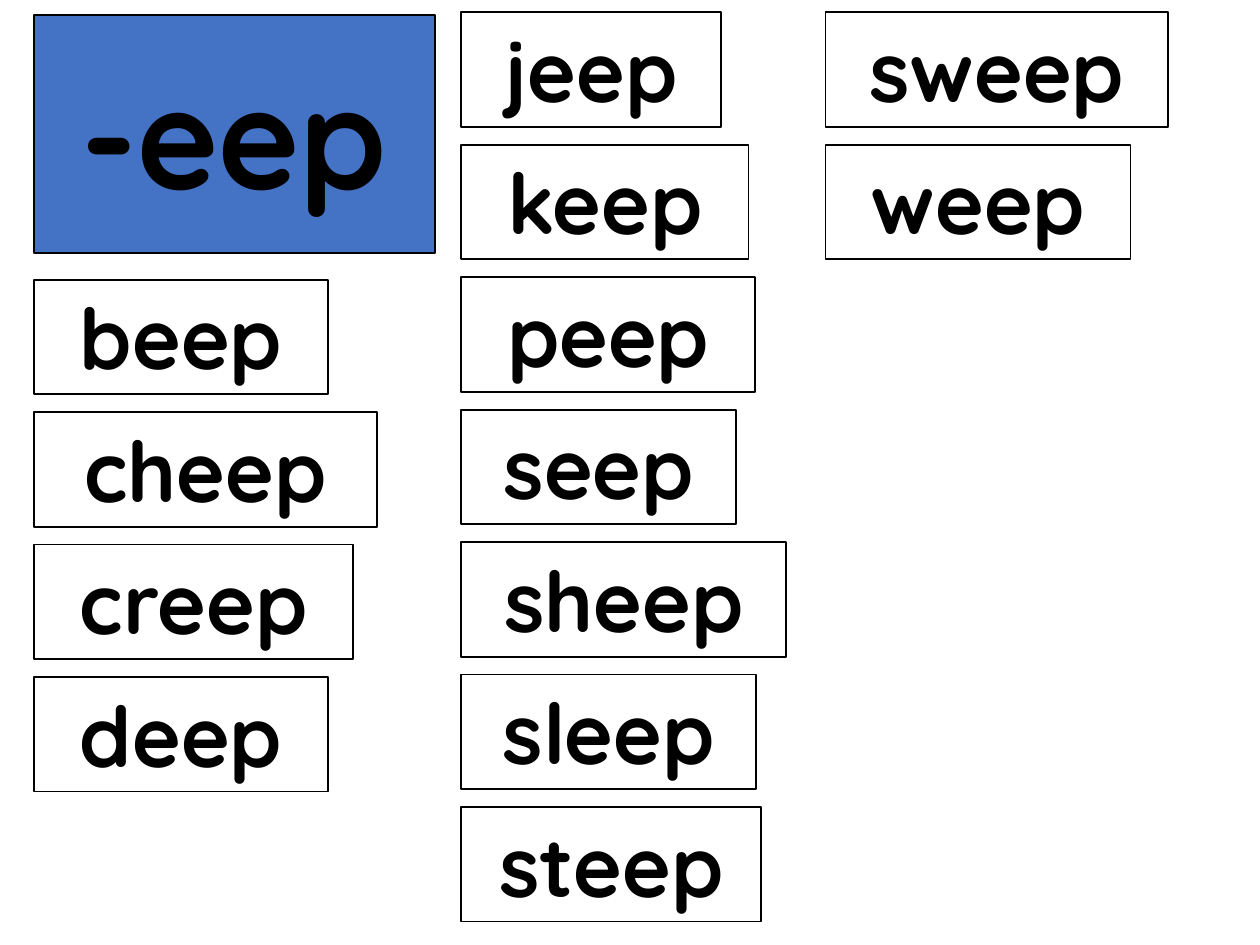
import pptx
import pptx.util
import pptx.dml.color
import pptx.enum.shapes
import pptx.enum.text

Cm = pptx.util.Cm
Pt = pptx.util.Pt
RGBColor = pptx.dml.color.RGBColor
MSO_ANCHOR = pptx.enum.text.MSO_ANCHOR
MSO_AUTO_SIZE = pptx.enum.text.MSO_AUTO_SIZE

BLACK = RGBColor(0x00, 0x00, 0x00)
WHITE = RGBColor(0xFF, 0xFF, 0xFF)
BLUE = RGBColor(0x44, 0x72, 0xC4)

CARD_HEIGHT = 2.31
CARD_PITCH = 2.67

deck = pptx.Presentation()
deck.slide_width = Cm(25.4)
deck.slide_height = Cm(19.05)
page = deck.slides.add_slide(deck.slide_layouts[6])


def add_card(text, left, top, width, height, fill, size):
    box = page.shapes.add_shape(
        pptx.enum.shapes.MSO_SHAPE.RECTANGLE, Cm(left), Cm(top), Cm(width), Cm(height)
    )
    box.shadow.inherit = False
    box.fill.solid()
    box.fill.fore_color.rgb = fill
    box.line.color.rgb = BLACK
    box.line.width = Pt(1)
    para = box.text_frame.paragraphs[0]
    para.text = text
    para.alignment = pptx.enum.text.PP_ALIGN.CENTER
    para.font.name = "Quicksand"
    para.font.size = Pt(size)
    para.font.bold = True
    para.font.color.rgb = BLACK
    return box


columns = [
    (16.64, 0.25, [("sweep", 6.91), ("weep", 6.15)]),
    (9.3, 0.25, [
        ("jeep", 5.23), ("keep", 5.79), ("peep", 5.92), ("seep", 5.54),
        ("sheep", 6.55), ("sleep", 5.94), ("steep", 6.05),
    ]),
    (0.69, 5.64, [("beep", 5.92), ("cheep", 6.91), ("creep", 6.43), ("deep", 5.92)]),
]

for left, first_top, words in columns:
    for row, (word, width) in enumerate(words):
        top = first_top + row * CARD_PITCH
        card = add_card(f" {word} ", left, top, width, CARD_HEIGHT, WHITE, 48)
        card.text_frame.word_wrap = False
        card.text_frame.auto_size = MSO_AUTO_SIZE.SHAPE_TO_FIT_TEXT
        card.text_frame.vertical_anchor = MSO_ANCHOR.TOP

heading = add_card("-eep", 0.69, 0.3, 8.08, 4.8, BLUE, 80)
heading.text_frame.word_wrap = True
heading.text_frame.vertical_anchor = MSO_ANCHOR.MIDDLE

deck.save("out.pptx")
